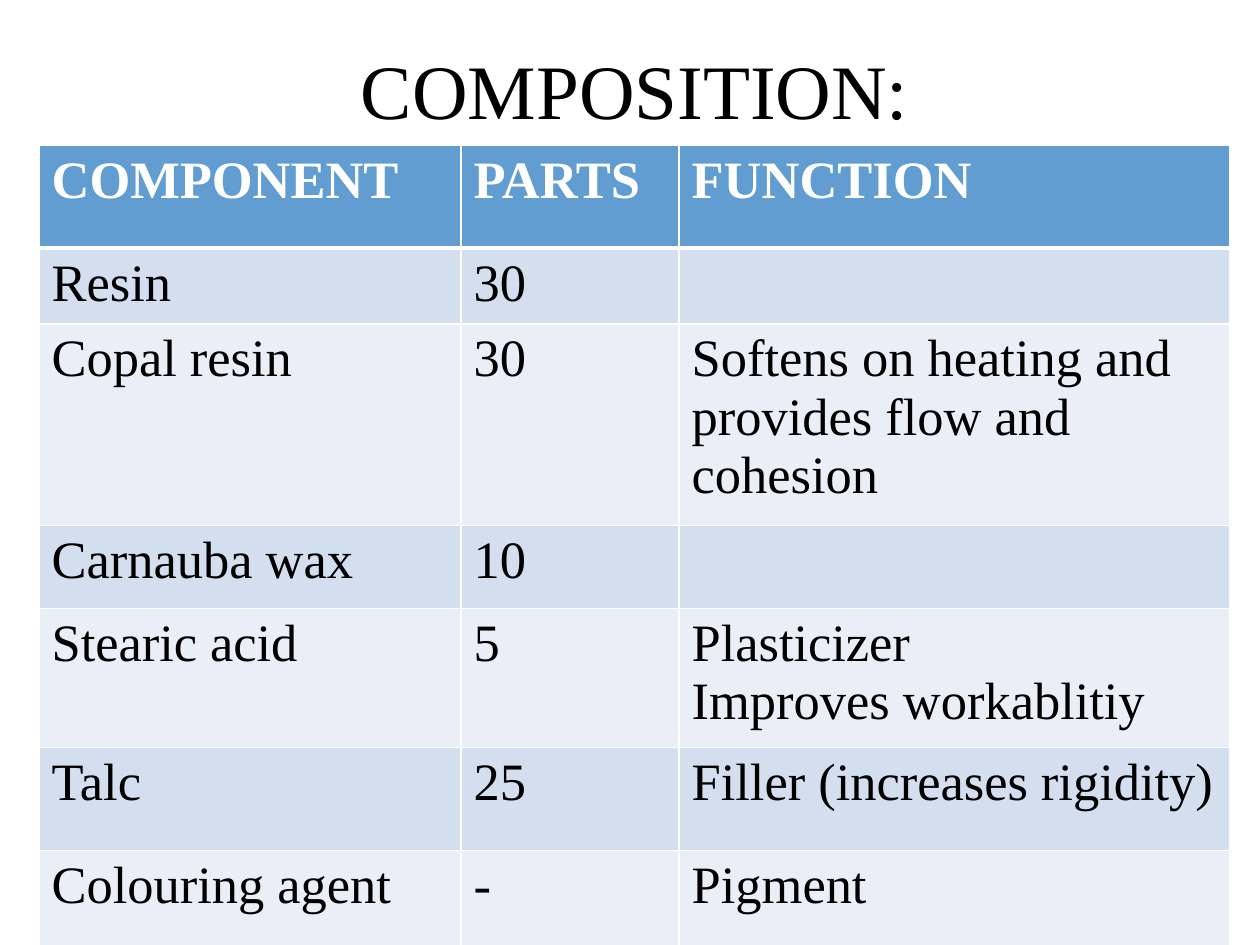
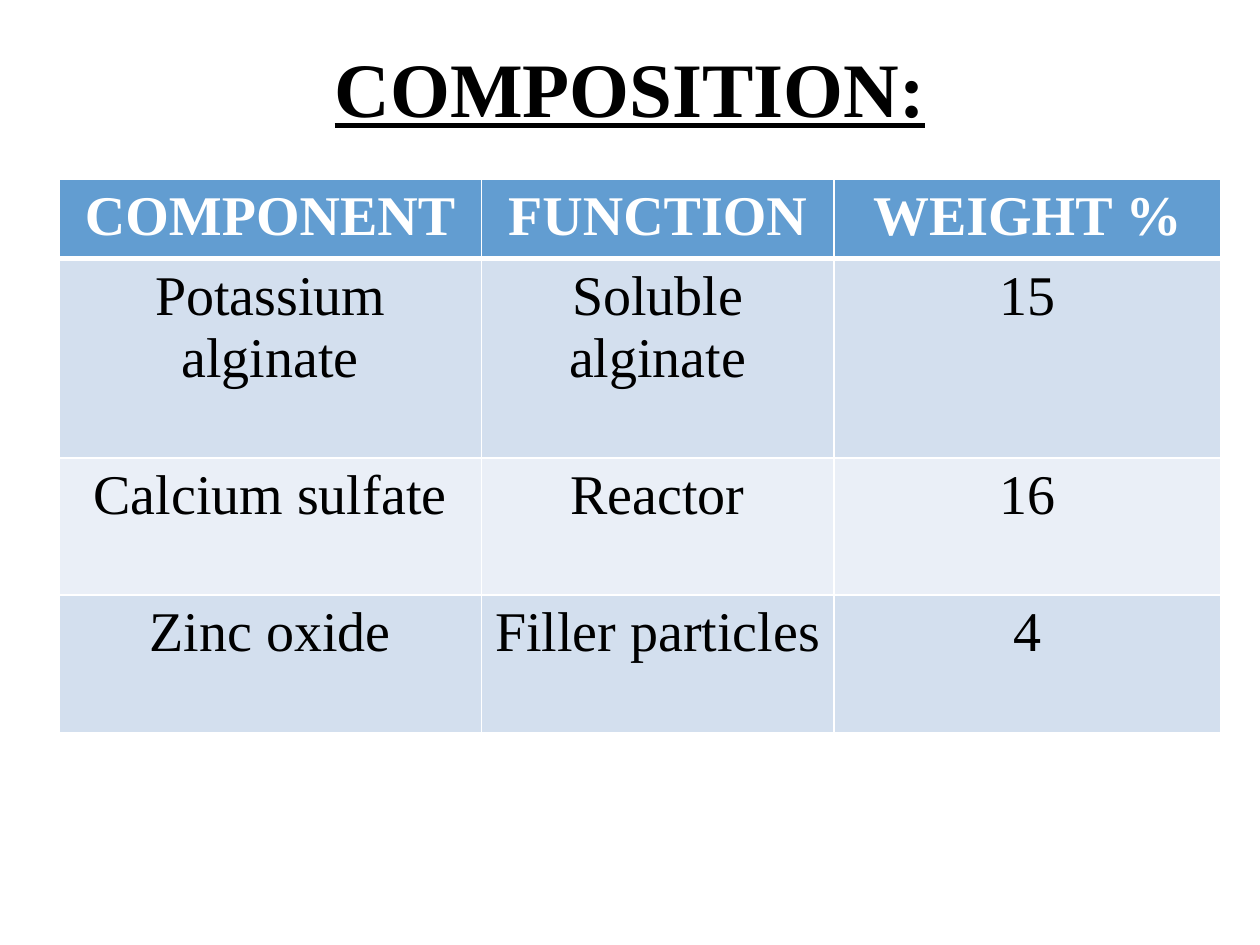
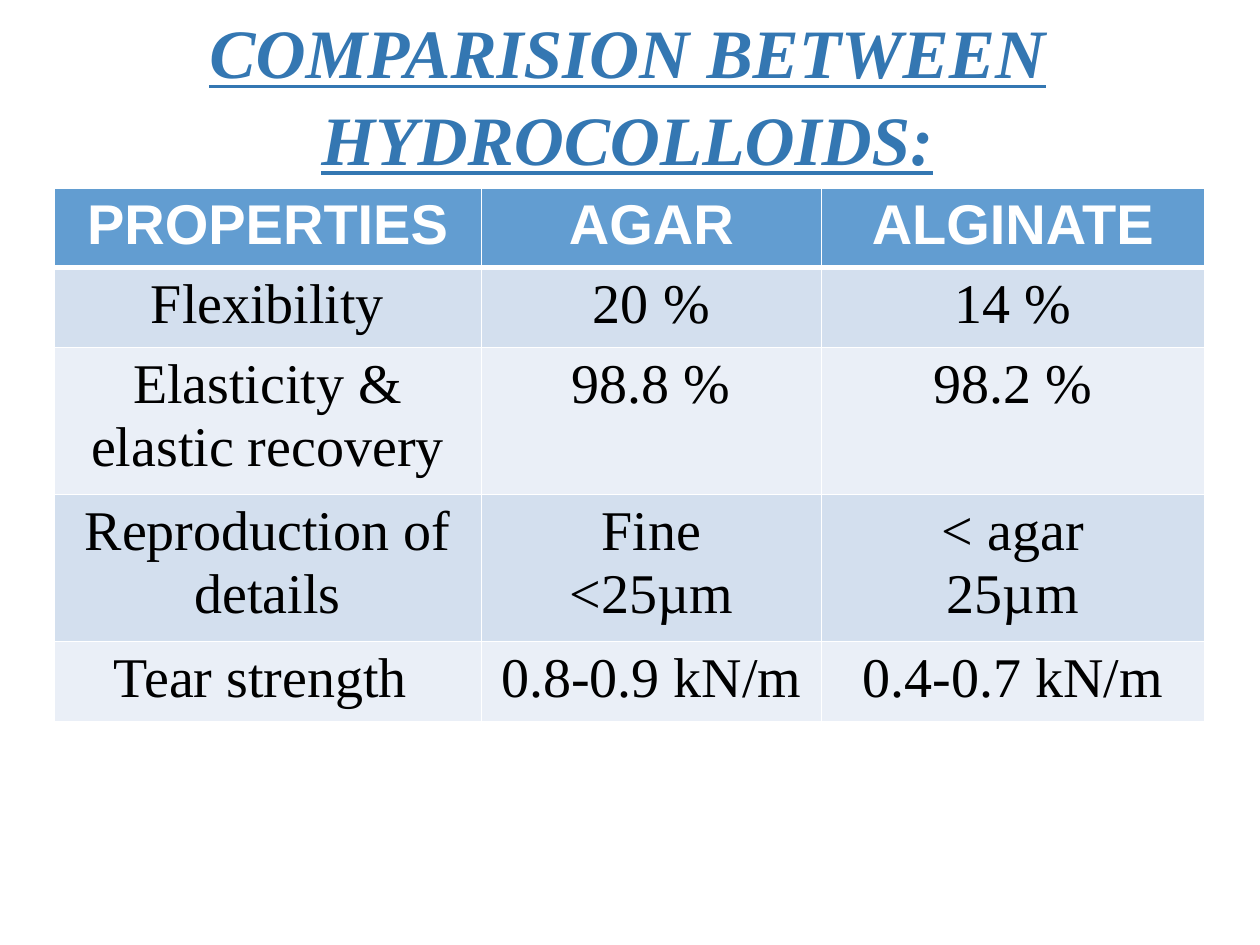
from dataclasses import dataclass

from lxml import etree
from pptx import Presentation
from pptx.dml.color import RGBColor
from pptx.enum.text import MSO_ANCHOR, PP_ALIGN
from pptx.oxml.ns import qn
from pptx.util import Inches, Pt

LEFT, CENTER = PP_ALIGN.LEFT, PP_ALIGN.CENTER
TOP, MIDDLE = MSO_ANCHOR.TOP, MSO_ANCHOR.MIDDLE
SERIF, SANS = "Times New Roman", "Arial"
BLACK, WHITE = "000000", "FFFFFF"
HEADER_FILL, TITLE_BLUE = "629DD1", "3477B2"
BAND_FILLS = ("D3DFEE", "EAEFF7")
THIN, THICK = 1, 3


@dataclass(frozen=True)
class Title:
    text: str
    box: tuple[float, float, float, float]
    size: float = 44
    color: str = BLACK
    bold: bool = False
    italic: bool = False
    underline: bool = False
    anchor: MSO_ANCHOR = MIDDLE
    top_margin: float = 0.16
    line_spacing: float = 1.0


@dataclass(frozen=True)
class Grid:
    left: float
    top: float
    widths: tuple[float, ...]
    heights: tuple[float, ...]
    rows: tuple[tuple[str, ...], ...]
    size: float = 32
    align: PP_ALIGN = CENTER
    header_font: str = SERIF


SLIDES = (
    (
        Title("COMPOSITION:", (0.54, 0.02, 9, 1.25)),
        Grid(
            0.31, 1.15, (3.35, 1.73, 4.37),
            (0.82, 0.56, 1.48, 0.66, 1.03, 0.82, 0.82),
            (
                ("COMPONENT", "PARTS", "FUNCTION"),
                ("Resin", "30", ""),
                ("Copal resin", "30",
                 "Softens on heating and provides flow and cohesion"),
                ("Carnauba wax", "10", ""),
                ("Stearic acid", "5", "Plasticizer\nImproves workablitiy"),
                ("Talc", "25", "Filler (increases rigidity)"),
                ("Colouring agent", "-", "Pigment"),
            ),
            size=30, align=LEFT,
        ),
    ),
    (
        Title("COMPOSITION:", (0.31, 0.21, 9.38, 5), bold=True,
              underline=True, anchor=TOP, top_margin=0.11),
        Grid(
            0.47, 1.42, (3.35, 2.8, 3.07), (0.59, 1.58, 1.09, 1.09),
            (
                ("COMPONENT", "FUNCTION", "WEIGHT %"),
                ("Potassium alginate", "Soluble alginate", "15"),
                ("Calcium sulfate", "Reactor", "16"),
                ("Zinc oxide", "Filler particles", "4"),
            ),
        ),
    ),
    (
        Title("COMPARISION BETWEEN HYDROCOLLOIDS:", (0.59, 0.08, 8.78, 1.2),
              size=39.6, color=TITLE_BLUE, bold=True, italic=True,
              underline=True, line_spacing=1.04),
        Grid(
            0.43, 1.49, (3.39, 2.7, 3.04), (0.59, 0.59, 1.09, 1.09, 0.59),
            (
                ("PROPERTIES", "AGAR", "ALGINATE"),
                ("Flexibility", "20 %", "14 %"),
                ("Elasticity & elastic recovery", "98.8 %", "98.2 %"),
                ("Reproduction of details", "Fine\n<25µm", "< agar\n25µm"),
                ("Tear strength ", "0.8-0.9 kN/m", "0.4-0.7 kN/m"),
            ),
            header_font=SANS,
        ),
    ),
)


def rgb(color: str) -> RGBColor:
    return RGBColor.from_string(color)


def style_paragraph(p, size: float, color: str, align: PP_ALIGN,
                    bold: bool, name: str = SERIF) -> None:
    p.alignment = align
    p.font.name = name
    p.font.size = Pt(size)
    p.font.bold = bold
    p.font.color.rgb = rgb(color)


def add_title(slide, title: Title) -> None:
    tb = slide.shapes.add_textbox(*map(Inches, title.box))
    tf = tb.text_frame
    tf.word_wrap = True
    tf.vertical_anchor = title.anchor
    tf.margin_top = Inches(title.top_margin)
    p = tf.paragraphs[0]
    p.text = title.text
    p.line_spacing = title.line_spacing
    style_paragraph(p, title.size, title.color, CENTER, title.bold)
    p.font.italic = title.italic
    p.font.underline = title.underline


def add_borders(cell, top: int, bottom: int) -> None:
    tc_pr = cell._tc.get_or_add_tcPr()
    for side, width in (("L", THIN), ("R", THIN), ("T", top), ("B", bottom)):
        ln = etree.SubElement(tc_pr, qn(f"a:ln{side}"), w=str(Pt(width)))
        fill = etree.SubElement(ln, qn("a:solidFill"))
        etree.SubElement(fill, qn("a:srgbClr"), val=WHITE)


def add_grid(slide, grid: Grid) -> None:
    table = slide.shapes.add_table(
        len(grid.rows), len(grid.widths), Inches(grid.left), Inches(grid.top),
        Inches(sum(grid.widths)), Inches(sum(grid.heights)),
    ).table
    table.horz_banding = False
    for column, width in zip(table.columns, grid.widths):
        column.width = Inches(width)
    for i, (height, texts) in enumerate(zip(grid.heights, grid.rows)):
        table.rows[i].height = Inches(height)
        header = i == 0
        for j, text in enumerate(texts):
            cell = table.cell(i, j)
            add_borders(cell, THICK if i == 1 else THIN,
                        THICK if header else THIN)
            cell.fill.solid()
            cell.fill.fore_color.rgb = rgb(
                HEADER_FILL if header else BAND_FILLS[(i - 1) % 2])
            cell.text = text
            for p in cell.text_frame.paragraphs:
                style_paragraph(p, grid.size, WHITE if header else BLACK,
                                grid.align, header,
                                grid.header_font if header else SERIF)


def main() -> None:
    prs = Presentation()
    prs.slide_width, prs.slide_height = Inches(10), Inches(7.5)
    for title, grid in SLIDES:
        slide = prs.slides.add_slide(prs.slide_layouts[6])
        add_title(slide, title)
        add_grid(slide, grid)
    prs.save("out.pptx")


if __name__ == "__main__":
    main()
